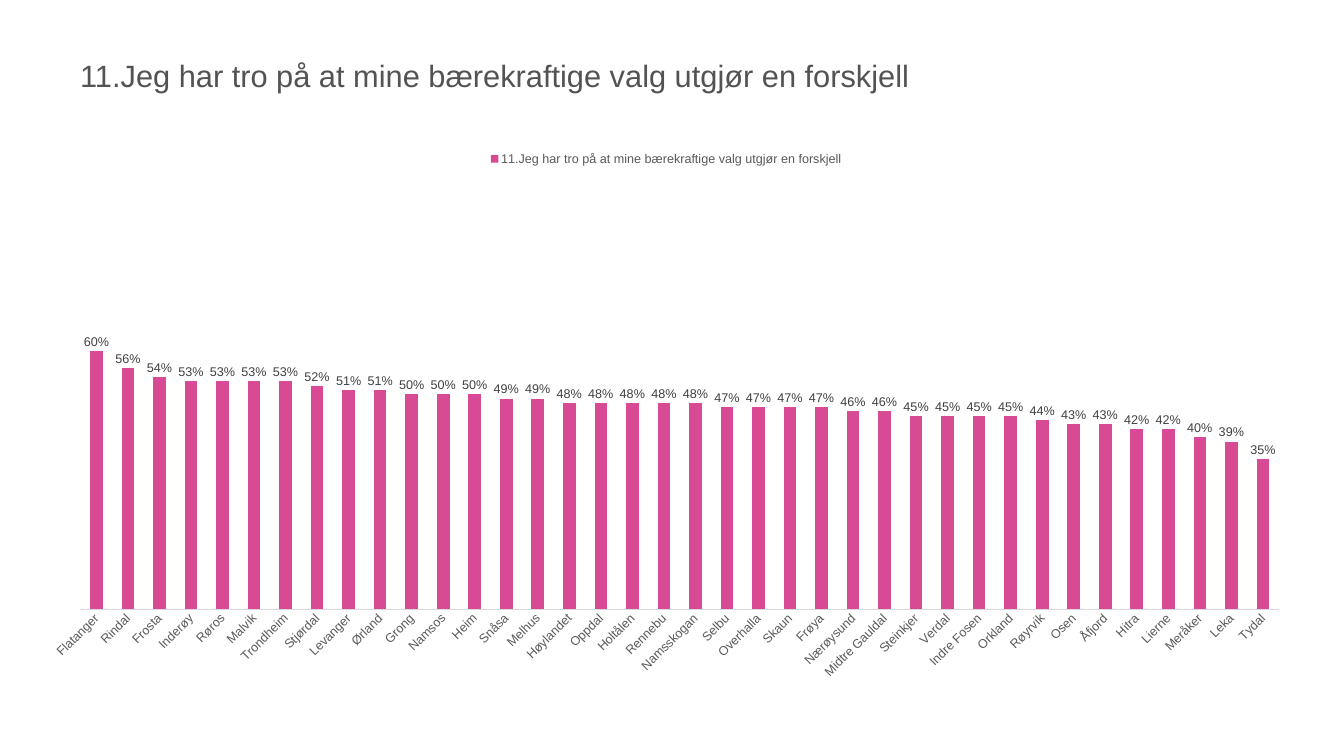
import pptx
import pptx.chart.data
import pptx.dml.color
import pptx.enum.chart
import pptx.enum.text
import pptx.util
from dataclasses import dataclass
from pptx.util import Inches


@dataclass(frozen=True)
class Theme:
    font: str = "Arial"
    title_size: int = 44
    chart_size: int = 18
    background: str = "FFFFFF"
    title: str = "535353"
    axis_text: str = "595959"
    label: str = "404040"
    axis_line: str = "D9D9D9"
    bar: str = "D94A94"


def rgb(value):
    return pptx.dml.color.RGBColor.from_string(value)


class SlideBuilder:
    def __init__(self, prs, theme):
        self.theme = theme
        self.s = prs.slides.add_slide(prs.slide_layouts[5])
        self.s.background.fill.solid()
        self.s.background.fill.fore_color.rgb = rgb(theme.background)

    def style(self, font, size, color):
        font.name = self.theme.font
        font.size = pptx.util.Pt(size)
        font.bold = False
        font.color.rgb = rgb(color)

    def title(self, text, left, top, width, height):
        sp = self.s.shapes.title
        sp.left, sp.top = Inches(left), Inches(top)
        sp.width, sp.height = Inches(width), Inches(height)
        tf = sp.text_frame
        tf.word_wrap = True
        tf.auto_size = pptx.enum.text.MSO_AUTO_SIZE.NONE
        tf.vertical_anchor = pptx.enum.text.MSO_ANCHOR.MIDDLE
        tf.margin_left = tf.margin_right = Inches(0.06)
        tf.margin_top = tf.margin_bottom = Inches(0.06)
        p = tf.paragraphs[0]
        p.alignment = pptx.enum.text.PP_ALIGN.LEFT
        r = p.add_run()
        r.text = text
        self.style(r.font, self.theme.title_size, self.theme.title)

    def column_chart(self, name, shares, left, top, width, height):
        t = self.theme
        data = pptx.chart.data.CategoryChartData(number_format="0%")
        data.categories = list(shares)
        data.add_series(name, [percent / 100 for percent in shares.values()])
        chart = self.s.shapes.add_chart(
            pptx.enum.chart.XL_CHART_TYPE.COLUMN_CLUSTERED,
            Inches(left), Inches(top), Inches(width), Inches(height), data,
        ).chart
        self.style(chart.font, t.chart_size, t.axis_text)
        chart.has_title = False
        chart.has_legend = True
        chart.legend.position = pptx.enum.chart.XL_LEGEND_POSITION.TOP
        chart.legend.include_in_layout = False
        self.style(chart.legend.font, t.chart_size, t.axis_text)
        self.axes(chart)
        self.bars(chart.plots[0])

    def axes(self, chart):
        t = self.theme
        none = pptx.enum.chart.XL_TICK_MARK.NONE
        axis = chart.category_axis
        axis.major_tick_mark = axis.minor_tick_mark = none
        axis.format.line.color.rgb = rgb(t.axis_line)
        axis.format.line.width = pptx.util.Pt(0.75)
        self.style(axis.tick_labels.font, t.chart_size, t.axis_text)
        axis._element.txPr.bodyPr.set("rot", "-2700000")
        axis = chart.value_axis
        axis.minimum_scale, axis.maximum_scale = 0, 1
        axis.has_major_gridlines = False
        axis.visible = False

    def bars(self, plot):
        t = self.theme
        plot.vary_by_categories = False
        plot.gap_width = 150
        plot.overlap = -25
        series = plot.series[0]
        series.invert_if_negative = False
        series.format.fill.solid()
        series.format.fill.fore_color.rgb = rgb(t.bar)
        labels = series.data_labels
        labels.show_value = True
        labels.number_format = "0%"
        labels.number_format_is_linked = False
        labels.position = pptx.enum.chart.XL_LABEL_POSITION.OUTSIDE_END
        self.style(labels.font, t.chart_size, t.label)


QUESTION = "11.Jeg har tro på at mine bærekraftige valg utgjør en forskjell"
SHARES = {
    "Flatanger": 60, "Rindal": 56, "Frosta": 54, "Inderøy": 53,
    "Røros": 53, "Malvik": 53, "Trondheim": 53, "Stjørdal": 52,
    "Levanger": 51, "Ørland": 51, "Grong": 50, "Namsos": 50,
    "Heim": 50, "Snåsa": 49, "Melhus": 49, "Høylandet": 48,
    "Oppdal": 48, "Holtålen": 48, "Rennebu": 48, "Namsskogan": 48,
    "Selbu": 47, "Overhalla": 47, "Skaun": 47, "Frøya": 47,
    "Nærøysund": 46, "Midtre Gauldal": 46, "Steinkjer": 45, "Verdal": 45,
    "Indre Fosen": 45, "Orkland": 45, "Røyrvik": 44, "Osen": 43,
    "Åfjord": 43, "Hitra": 42, "Lierne": 42, "Meråker": 40,
    "Leka": 39, "Tydal": 35,
}


def main():
    prs = pptx.Presentation()
    prs.slide_width, prs.slide_height = Inches(26.67), Inches(15)
    slide = SlideBuilder(prs, Theme())
    slide.title(QUESTION, 1.53, 0.47, 24.58, 2.04)
    slide.column_chart(QUESTION, SHARES, 0.56, 2.89, 25.32, 10.8)
    prs.save("out.pptx")


if __name__ == "__main__":
    main()
